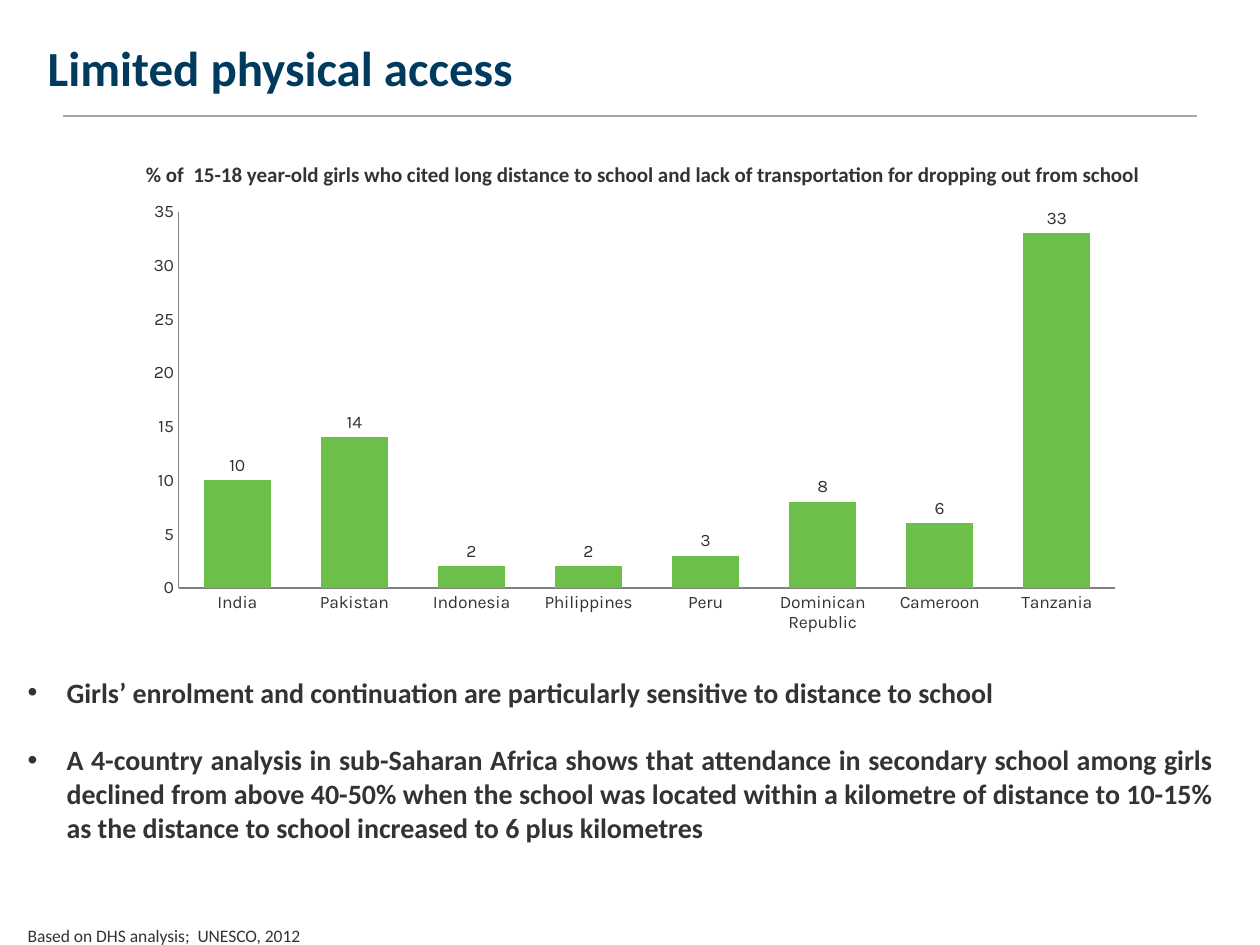
from lxml.etree import SubElement
from pptx import Presentation
from pptx.chart.data import CategoryChartData
from pptx.dml.color import RGBColor
from pptx.enum.chart import XL_CHART_TYPE, XL_LABEL_POSITION, XL_TICK_MARK
from pptx.enum.shapes import MSO_CONNECTOR
from pptx.enum.text import MSO_ANCHOR, PP_ALIGN
from pptx.oxml.ns import qn
from pptx.util import Inches, Pt

COLORS = {name: RGBColor.from_string(value) for name, value in {
    "title": "003A5D", "text": "333333", "rule": "A6A6A6",
    "axis": "808080", "bar": "6CC04A"}.items()}

prs = Presentation()
prs.slide_width, prs.slide_height = Inches(10), Inches(7.5)
s = prs.slides.add_slide(prs.slide_layouts[6])


def add_text(box, paragraphs, size, color="text", bold=True):
    sp = s.shapes.add_textbox(*[Inches(v) for v in box])
    tf = sp.text_frame
    tf.word_wrap = True
    tf.text = "\n".join(paragraphs)
    for p in tf.paragraphs:
        p.font.name, p.font.size, p.font.bold = "Calibri", Pt(size), bold
        p.font.color.rgb = COLORS[color]
    return tf


# Title and rule
rule = s.shapes.add_connector(MSO_CONNECTOR.STRAIGHT, Inches(0.5), Inches(0.92),
                              Inches(9.5), Inches(0.92))
rule.line.color.rgb, rule.line.width = COLORS["rule"], Pt(1)
SubElement(rule._element.spPr, qn("a:effectLst"))
title = add_text((0.28, 0.21, 9.22, 0.64), ["Limited physical access"], 28, "title")
title.vertical_anchor = MSO_ANCHOR.MIDDLE

# Bulleted findings
findings = add_text((0.12, 5.31, 9.61, 1.45), [
    "Girls’ enrolment and continuation are particularly sensitive to distance to school",
    "A 4-country analysis in sub-Saharan Africa shows that attendance in secondary "
    "school among girls declined from above 40-50% when the school was located within "
    "a kilometre of distance to 10-15% as the distance to school increased to 6 plus "
    "kilometres"], 16)
for p in findings.paragraphs:
    p.alignment = PP_ALIGN.JUSTIFY
    pPr = p._p.get_or_add_pPr()
    pPr.set("marL", str(Inches(0.31)))
    pPr.set("indent", str(-Inches(0.31)))
    bullet_font = pPr.makeelement(qn("a:buFont"), {"typeface": "Arial"})
    bullet = pPr.makeelement(qn("a:buChar"), {"char": "•"})
    pPr.insert(0, bullet_font)
    pPr.insert(1, bullet)
findings.paragraphs[1].space_before = Pt(19.5)

# Chart heading and source note
add_text((1.06, 1.23, 8.43, 0.3), [
    "% of  15-18 year-old girls who cited long distance to school and lack of "
    "transportation for dropping out from school"], 12)
add_text((0.12, 7.29, 4.49, 0.27), ["Based on DHS analysis;  UNESCO, 2012"], 10, bold=False)

# Column chart
data = CategoryChartData()
data.categories = ["India", "Pakistan", "Indonesia", "Philippines", "Peru",
                   "Dominican Republic", "Cameroon", "Tanzania"]
data.add_series("Series 1", [10, 14, 2, 2, 3, 8, 6, 33])
chart = s.shapes.add_chart(XL_CHART_TYPE.COLUMN_CLUSTERED, Inches(1.06), Inches(1.53),
                           Inches(7.95), Inches(3.56), data).chart
chart.has_title = chart.has_legend = False
chart.font.name, chart.font.size = "Karla", Pt(10)
chart.font.color.rgb = COLORS["text"]

for axis in (chart.category_axis, chart.value_axis):
    axis.has_major_gridlines = False
    axis.major_tick_mark = axis.minor_tick_mark = XL_TICK_MARK.NONE
    axis.format.line.color.rgb = COLORS["axis"]
    axis.format.line.width = Pt(0.75)
chart.value_axis.minimum_scale, chart.value_axis.maximum_scale = 0, 35
chart.value_axis.major_unit = 5

plot = chart.plots[0]
plot.gap_width, plot.vary_by_categories = 75, False
plot.has_data_labels = True
plot.data_labels.show_value = True
plot.data_labels.position = XL_LABEL_POSITION.OUTSIDE_END
bars = plot.series[0]
bars.invert_if_negative = False
bars.format.fill.solid()
bars.format.fill.fore_color.rgb = COLORS["bar"]

prs.save("out.pptx")
